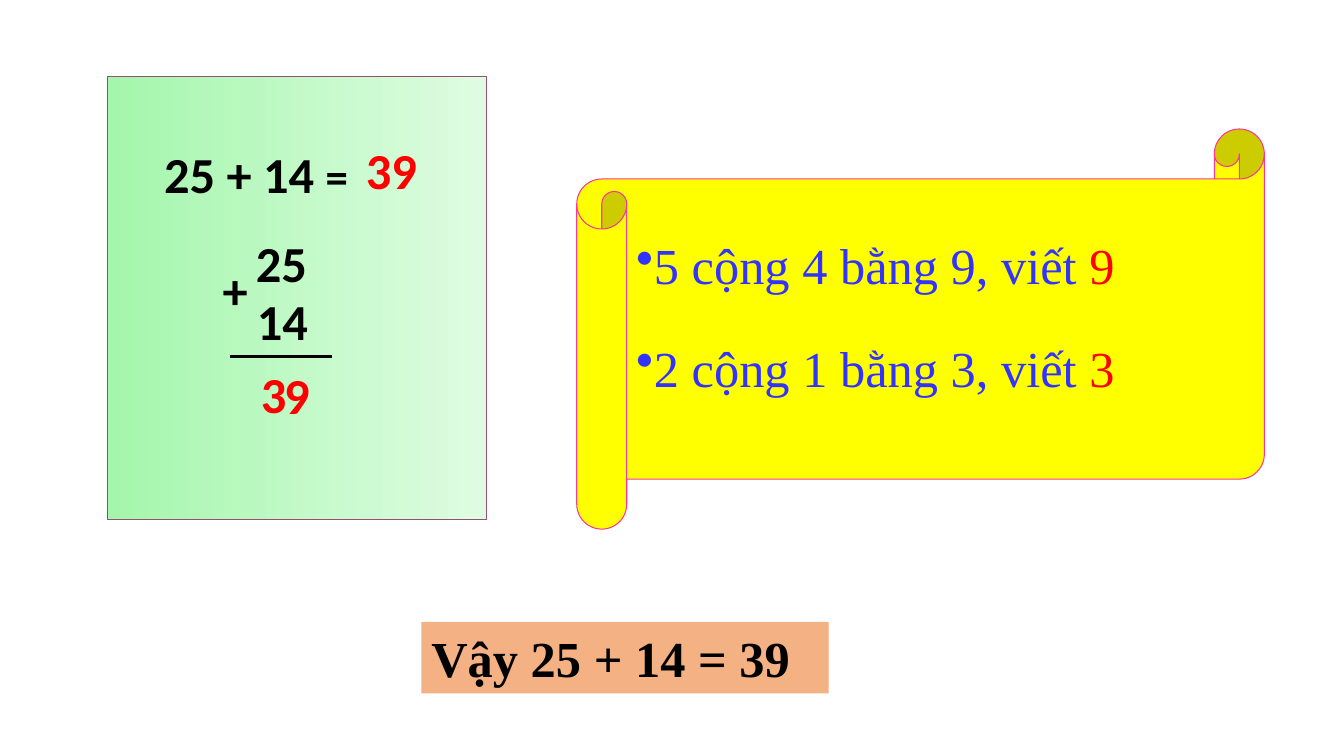
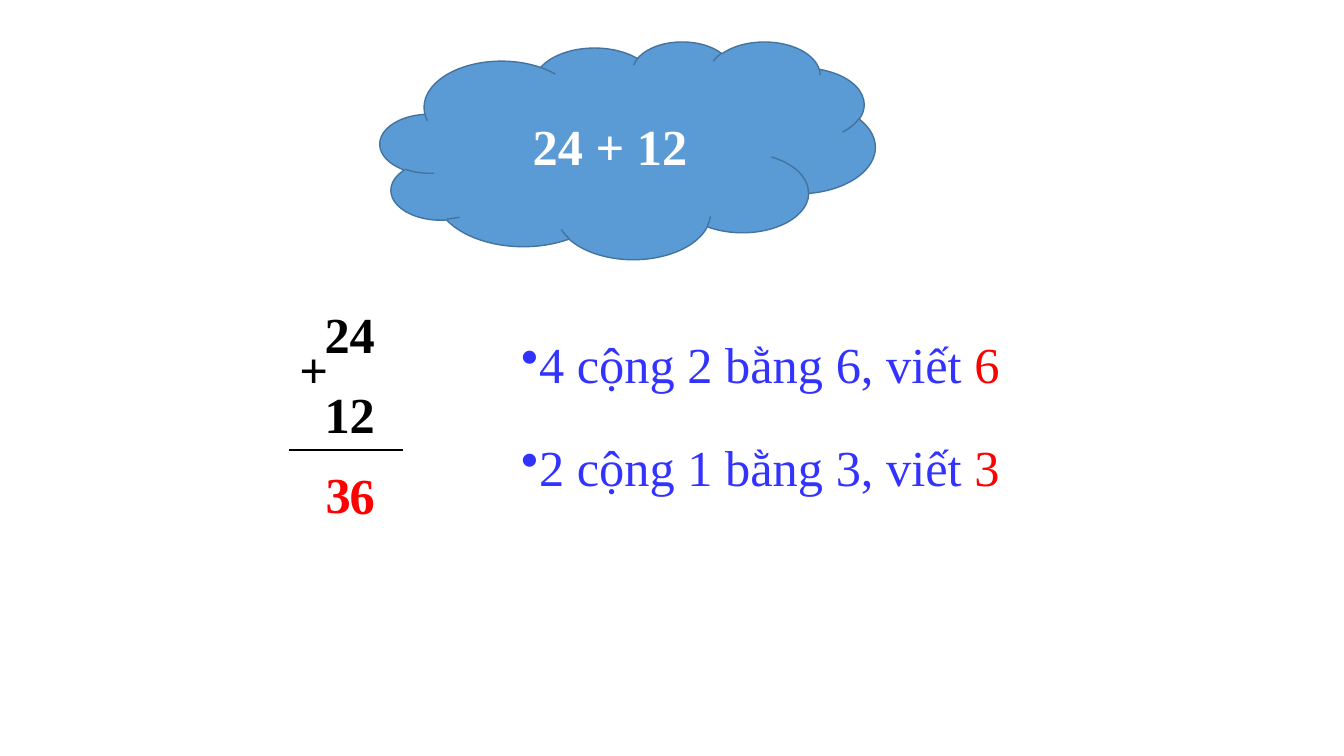
import pptx
import pptx.util
import pptx.dml.color
import pptx.enum.shapes
import pptx.enum.text
import pptx.oxml.ns
import lxml.etree

Inches = pptx.util.Inches
Pt = pptx.util.Pt
MSO_SHAPE = pptx.enum.shapes.MSO_SHAPE
COLORS = {
    "black": "000000", "red": "FF0000", "blue": "3333FF", "white": "FFFFFF",
    "green": "A4F6AC", "pale_green": "DFFCE2", "plum": "954F72",
    "yellow": "FFFF00", "pink": "FF3399", "orange": "F4B183",
    "cloud": "5B9BD5", "cloud_line": "43739E",
}
RGB = {name: pptx.dml.color.RGBColor.from_string(c) for name, c in COLORS.items()}
SANS, SERIF = "Calibri", "Times New Roman"
SIZE = Pt(36)
TEXT_H = 0.71

prs = pptx.Presentation()
prs.slide_width, prs.slide_height = Inches(13.33), Inches(7.5)
blank = prs.slide_layouts[6]


def add_text(s, x, y, w, runs, font, bold=True, bullet=False, wrap=True):
    """Add a one-line text box; runs are (text, colour name) pairs."""
    sp = s.shapes.add_textbox(Inches(x), Inches(y), Inches(w), Inches(TEXT_H))
    tf = sp.text_frame
    tf.word_wrap = wrap
    tf.auto_size = pptx.enum.text.MSO_AUTO_SIZE.SHAPE_TO_FIT_TEXT
    p = tf.paragraphs[0]
    if bullet:
        bu = lxml.etree.SubElement(p._p.get_or_add_pPr(), pptx.oxml.ns.qn("a:buChar"))
        bu.set("char", "•")
    p.font.name, p.font.size, p.font.bold = font, SIZE, bold
    for text, color in runs:
        r = p.add_run()
        r.text = text
        r.font.name, r.font.size, r.font.bold = font, SIZE, bold
        r.font.color.rgb = RGB[color]
    return sp


def add_shape(s, kind, x, y, w, h, fill=None, line=None, line_w=0.75):
    """Add a preset shape without shadow."""
    sp = s.shapes.add_shape(kind, Inches(x), Inches(y), Inches(w), Inches(h))
    sp.shadow.inherit = False
    if fill:
        sp.fill.solid()
        sp.fill.fore_color.rgb = RGB[fill]
    if line:
        sp.line.color.rgb = RGB[line]
        sp.line.width = Pt(line_w)
    else:
        sp.line.fill.background()
    return sp


# Slide 1 panels: gradient card and scroll
s1 = prs.slides.add_slide(blank)
card = add_shape(s1, MSO_SHAPE.RECTANGLE, 1.07, 0.76, 3.76, 4.39, line="plum")
card.fill.gradient()
card.fill.gradient_angle = 0
for stop, position, color in zip(card.fill.gradient_stops, (0, 1), ("green", "pale_green")):
    stop.position = position
    stop.color.rgb = RGB[color]
scroll = add_shape(s1, MSO_SHAPE.HORIZONTAL_SCROLL, 5.72, 1.28, 6.82, 3.97, "yellow", "pink")
scroll.adjustments[0] = 0.125

# Slide 1 equation
equation = add_text(s1, 1.53, 1.37, 4.17, [("25 + 14 ", "black"), ("=", "black")], SANS)
equation.text_frame.paragraphs[0].runs[1].font.size = Pt(32)
add_text(s1, 3.53, 1.33, 0.88, [("39", "red")], SANS)

# Slide 1 conclusion
answer = add_shape(s1, MSO_SHAPE.RECTANGLE, 4.18, 6.17, 4.04, TEXT_H, "orange")
# Slide 2 cloud
s2 = prs.slides.add_slide(blank)
cloud = add_shape(s2, MSO_SHAPE.CLOUD, 3.77, 0.41, 4.91, 2.16, "cloud", "cloud_line", 1)
PP_ALIGN = pptx.enum.text.PP_ALIGN
for sp, text, color, align in (
    (answer, "Vậy 25 + 14 = 39", "black", PP_ALIGN.LEFT),
    (cloud, "24 + 12", "white", PP_ALIGN.CENTER),
):
    sp.text_frame.word_wrap = True
    p = sp.text_frame.paragraphs[0]
    p.text = text
    p.alignment = align
    p.font.name, p.font.size, p.font.bold = SERIF, SIZE, True
    p.font.color.rgb = RGB[color]

# Column additions: (text, x, y, width, colour) and the rule (x1, x2, y, weight)
columns = [
    (s1, SANS, True, (2.28, 3.29, 3.54, 2.25), [
        ("25", 2.44, 2.25, 1.02, "black"), ("14", 2.45, 2.83, 1.02, "black"),
        ("+", 2.11, 2.52, 1.02, "black"),
        ("9", 2.72, 3.56, 0.51, "red"), ("3", 2.49, 3.55, 0.51, "red")]),
    (s2, SERIF, False, (2.87, 4, 4.46, 1.5), [
        ("24", 3.12, 2.96, 0.71, "black"), ("12", 3.12, 3.75, 0.71, "black"),
        ("+", 2.87, 3.31, 0.49, "black"),
        ("6", 3.37, 4.56, 0.45, "red"), ("3", 3.13, 4.54, 0.45, "red")]),
]
for s, font, wrap, (x1, x2, y_rule, weight), numbers in columns:
    for text, x, y, w, color in numbers:
        add_text(s, x, y, w, [(text, color)], font, wrap=wrap)
    rule = s.shapes.add_connector(pptx.enum.shapes.MSO_CONNECTOR.STRAIGHT,
                                  Inches(x1), Inches(y_rule), Inches(x2), Inches(y_rule))
    rule.line.color.rgb = RGB["black"]
    rule.line.width = Pt(weight)
    lxml.etree.SubElement(rule._element.spPr, pptx.oxml.ns.qn("a:effectLst"))

# Worked steps, one bullet per digit
steps = [
    (s1, 6.21, 2.27, [("5 cộng 4 bằng 9, viết ", "9"), ("2 cộng 1 bằng 3, viết ", "3")]),
    (s2, 5.07, 3.26, [("4 cộng 2 bằng 6, viết ", "6"), ("2 cộng 1 bằng 3, viết ", "3")]),
]
for s, x, top, lines in steps:
    for i, (text, digit) in enumerate(lines):
        add_text(s, x, top + i * 1.02, 5.39, [(text, "blue"), (digit, "red")],
                 SERIF, bold=False, bullet=True)

prs.save("out.pptx")
